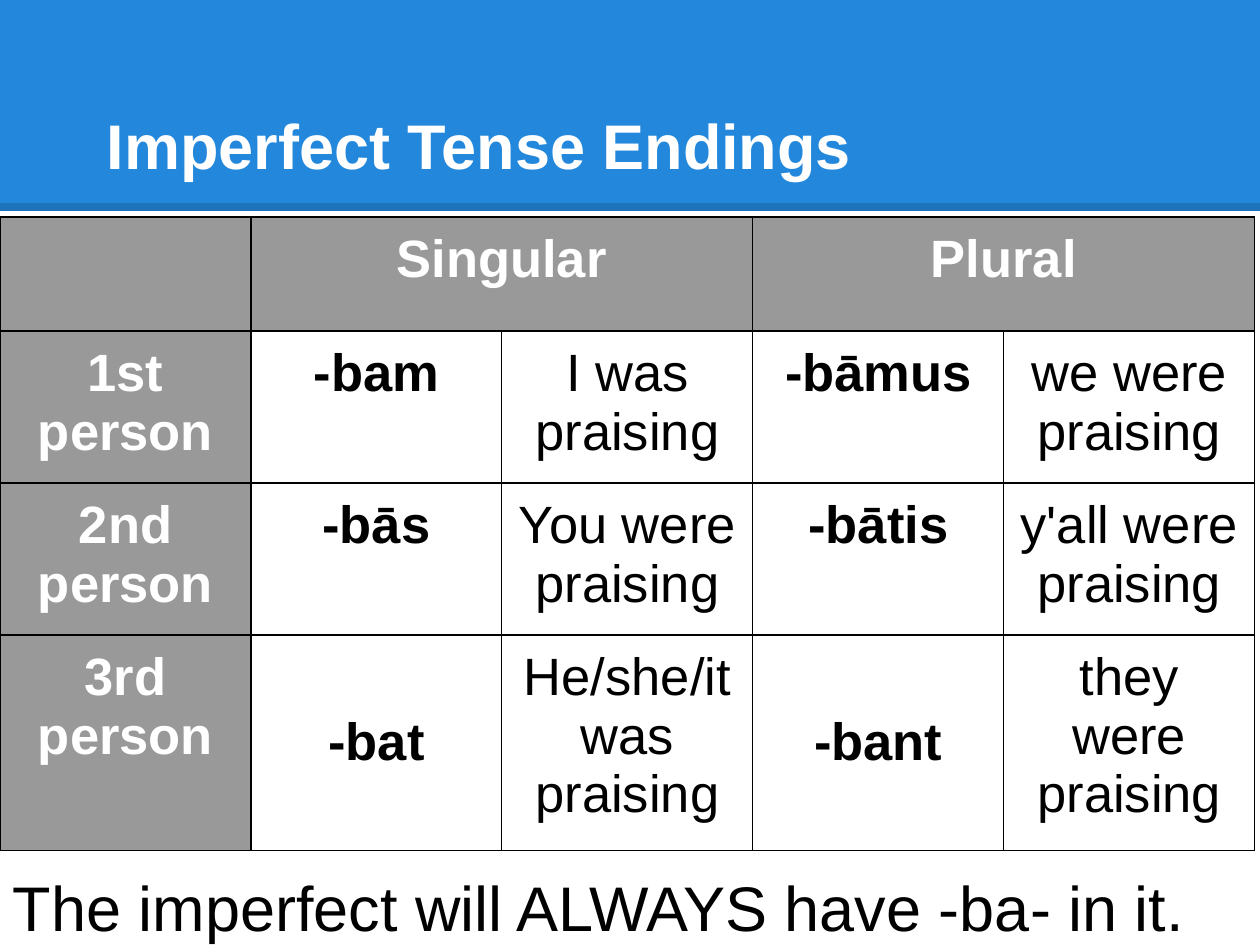
from lxml import etree
from pptx import Presentation
from pptx.dml.color import RGBColor
from pptx.enum.shapes import MSO_CONNECTOR, MSO_SHAPE
from pptx.enum.text import MSO_ANCHOR, PP_ALIGN
from pptx.oxml.ns import qn
from pptx.util import Pt

EMU_PER_PX = 914400 / 126
SLIDE_WIDTH, SLIDE_HEIGHT = 1260, 945
INSET = 13
BLUE, GRAY, WHITE, BLACK = "2388DB", "999999", "FFFFFF", "000000"
STRAIGHT, RECTANGLE = MSO_CONNECTOR.STRAIGHT, MSO_SHAPE.RECTANGLE
TOP, MIDDLE, BOTTOM = MSO_ANCHOR.TOP, MSO_ANCHOR.MIDDLE, MSO_ANCHOR.BOTTOM
CENTER = PP_ALIGN.CENTER

COLUMN_WIDTH = 251
ROW_HEIGHTS = [114, 142, 142, 201]
ENDINGS = [
    ["", "Singular", "", "Plural", ""],
    ["1st person", "-bam", "I was praising", "-bāmus", "we were praising"],
    ["2nd person", "-bās", "You were praising", "-bātis", "y'all were praising"],
    ["3rd person", "-bat", "He/she/it was praising", "-bant", "they were praising"],
]


def px(length):
    """Turn pixels into EMU."""
    return round(length * EMU_PER_PX)


def color(hex_code):
    """Turn a hex string into a colour."""
    return RGBColor.from_string(hex_code)


def set_margins(holder, margin=INSET):
    """Give a text frame or cell the same inset on every side."""
    for side in ("left", "right", "top", "bottom"):
        setattr(holder, f"margin_{side}", px(margin))


def write(frame, wording, size, hex_code, bold=False, align=None):
    """Write one formatted paragraph into a text frame."""
    paragraph = frame.paragraphs[0]
    paragraph.alignment = align
    run = paragraph.add_run()
    run.text = wording
    font_format = {"name": "Arial", "size": Pt(size), "bold": bold}
    for attribute, value in font_format.items():
        setattr(run.font, attribute, value)
    run.font.color.rgb = color(hex_code)


def add_text(slide, box, wording, hex_code, bold=False, anchor=TOP, indent=0):
    """Add a wrapped line of large text."""
    frame = slide.shapes.add_textbox(*map(px, box)).text_frame
    frame.word_wrap = True
    frame.vertical_anchor = anchor
    set_margins(frame)
    frame.margin_left = px(INSET + indent)
    write(frame, wording, 36, hex_code, bold)


def add_banner(slide):
    """Add the blue title band with its translucent lower rule."""
    band = slide.shapes.add_shape(RECTANGLE, 0, 0, px(SLIDE_WIDTH), px(211))
    band.shadow.inherit = False
    band.fill.solid()
    band.fill.fore_color.rgb = color(BLUE)
    band.line.fill.background()

    rule = slide.shapes.add_connector(STRAIGHT, 0, px(207), px(SLIDE_WIDTH), px(207))
    rule.line.width = Pt(4.5)
    rule.line.color.rgb = color(BLACK)
    tint = rule.line._ln.find(".//" + qn("a:srgbClr"))
    etree.SubElement(tint, qn("a:alpha"), val="15000")
    etree.SubElement(rule._element.spPr, qn("a:effectLst"))


def add_borders(cell):
    """Draw thin black borders around a cell."""
    properties = cell._tc.get_or_add_tcPr()
    for position, side in enumerate(("lnL", "lnR", "lnT", "lnB")):
        border = etree.Element(qn(f"a:{side}"), w=str(Pt(0.75)))
        fill = etree.SubElement(border, qn("a:solidFill"))
        etree.SubElement(fill, qn("a:srgbClr"), val=BLACK)
        properties.insert(position, border)


def fill_cell(cell, wording, is_header, is_ending, anchor):
    """Style one table cell and write its wording."""
    set_margins(cell)
    cell.vertical_anchor = anchor
    if is_header:
        cell.fill.solid()
        cell.fill.fore_color.rgb = color(GRAY)
    else:
        cell.fill.background()
    add_borders(cell)
    if wording:
        text_color = WHITE if is_header else BLACK
        write(cell.text_frame, wording, 30, text_color, is_header or is_ending, CENTER)


def add_endings_table(slide):
    """Add the table of endings by person and number."""
    column_count = len(ENDINGS[0])
    table = slide.shapes.add_table(
        len(ENDINGS), column_count, 0, px(217),
        px(COLUMN_WIDTH * column_count), px(sum(ROW_HEIGHTS)),
    ).table
    for column in table.columns:
        column.width = px(COLUMN_WIDTH)
    for row, height in zip(table.rows, ROW_HEIGHTS):
        row.height = px(height)
    for first in (1, 3):
        table.cell(0, first).merge(table.cell(0, first + 1))
    last_row = len(ENDINGS) - 1
    for r, wordings in enumerate(ENDINGS):
        for c, wording in enumerate(wordings):
            is_ending = c in (1, 3)
            anchor = MIDDLE if r == last_row and is_ending else TOP
            fill_cell(table.cell(r, c), wording, r == 0 or c == 0, is_ending, anchor)


def main():
    """Build and save the slide."""
    presentation = Presentation()
    presentation.slide_width = px(SLIDE_WIDTH)
    presentation.slide_height = px(SLIDE_HEIGHT)
    slide = presentation.slides.add_slide(presentation.slide_layouts[6])
    add_banner(slide)
    add_text(slide, (63, 38, 1134, 157), "Imperfect Tense Endings", WHITE,
             bold=True, anchor=BOTTOM, indent=31)
    add_endings_table(slide)
    add_text(slide, (0, 856, 1254, 89),
             "The imperfect will ALWAYS have -ba- in it.", BLACK)
    presentation.save("out.pptx")


if __name__ == "__main__":
    main()
